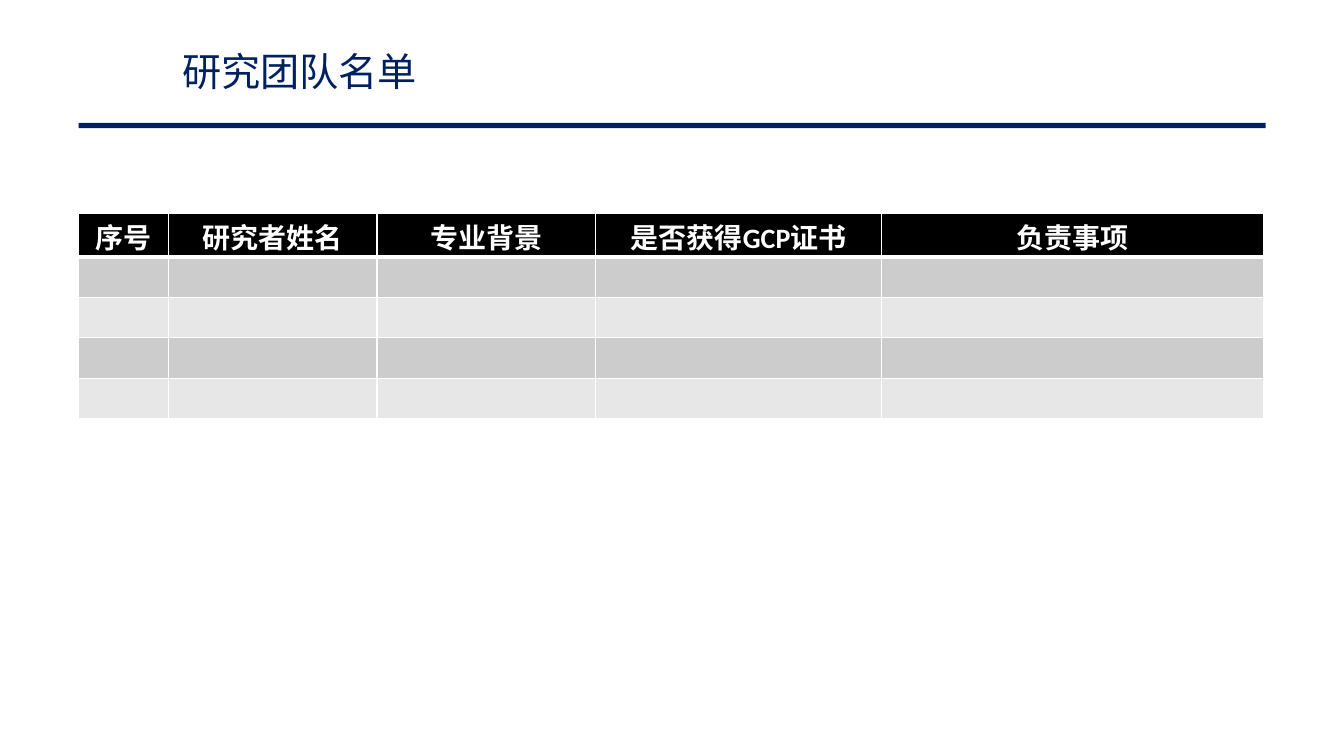
from dataclasses import dataclass

from lxml.etree import SubElement
from pptx import Presentation
from pptx.dml.color import RGBColor
from pptx.enum.shapes import MSO_SHAPE
from pptx.enum.text import MSO_ANCHOR, PP_ALIGN
from pptx.oxml.ns import qn
from pptx.util import Cm, Pt


@dataclass(frozen=True)
class Theme:
    navy: str = "002060"
    white: str = "FFFFFF"
    header: str = "000000"
    bands: tuple = ("CCCCCC", "E7E7E7")
    title_size: int = 28
    header_size: int = 20
    cjk_font: str = "Noto Sans CJK SC"
    latin_font: str = "Calibri"


THEME = Theme()
LEFT, WIDTH = Cm(1.98), Cm(29.92)
HEADERS = ["序号", "研究者姓名", "专业背景", "是否获得GCP证书", "负责事项"]
COLUMN_WIDTHS = [2.26, 5.26, 5.51, 7.21, 9.63]
BODY_ROWS = 4


def add_run(p, text, size, color, font, bold=False):
    r = p.add_run()
    r.text = text
    r.font.size = Pt(size)
    r.font.bold = bold
    r.font.name = font
    r.font.color.rgb = RGBColor.from_string(color)
    SubElement(r._r.get_or_add_rPr(), qn("a:ea"), typeface=THEME.cjk_font)


def add_title(s, text):
    tf = s.shapes.add_textbox(Cm(4.34), Cm(1.52), Cm(8.71), Cm(1.07)).text_frame
    tf.word_wrap = True
    tf.vertical_anchor = MSO_ANCHOR.MIDDLE
    p = tf.paragraphs[0]
    p.line_spacing = Pt(19)
    add_run(p, text, THEME.title_size, THEME.navy, THEME.cjk_font)


def add_rule(s):
    sp = s.shapes.add_shape(MSO_SHAPE.RECTANGLE, LEFT, Cm(3.1), WIDTH, Cm(0.13))
    sp.shadow.inherit = False
    sp.fill.solid()
    sp.fill.fore_color.rgb = RGBColor.from_string(THEME.navy)
    sp.line.fill.background()


def style_cell(cell, fill, top=1, bottom=1):
    # Borders come before the fill in the cell properties
    tc_pr = cell._tc.get_or_add_tcPr()
    for side, width in (("L", 1), ("R", 1), ("T", top), ("B", bottom)):
        ln = SubElement(tc_pr, qn(f"a:ln{side}"), w=str(Pt(width)))
        solid = SubElement(ln, qn("a:solidFill"))
        SubElement(solid, qn("a:srgbClr"), val=THEME.white)
    cell.fill.solid()
    cell.fill.fore_color.rgb = RGBColor.from_string(fill)


def add_team_table(s):
    heights = [Cm(1.09)] + [Cm(1.02)] * BODY_ROWS
    table = s.shapes.add_table(len(heights), len(HEADERS), LEFT, Cm(5.38),
                               WIDTH, sum(heights)).table
    for row, height in zip(table.rows, heights):
        row.height = height
    for column, width in zip(table.columns, COLUMN_WIDTHS):
        column.width = Cm(width)

    # Header row
    for i, text in enumerate(HEADERS):
        cell = table.cell(0, i)
        style_cell(cell, THEME.header, bottom=3)
        cell.margin_top, cell.margin_bottom = Cm(0.07), 0
        p = cell.text_frame.paragraphs[0]
        p.alignment = PP_ALIGN.CENTER
        add_run(p, text, THEME.header_size, THEME.white, THEME.latin_font, bold=True)

    # Empty banded rows
    for n in range(1, BODY_ROWS + 1):
        for cell in table.rows[n].cells:
            style_cell(cell, THEME.bands[(n - 1) % 2], top=3 if n == 1 else 1)
            cell.margin_top = cell.margin_bottom = Cm(0.1)


def main():
    prs = Presentation()
    prs.slide_width, prs.slide_height = Cm(33.87), Cm(19.05)
    s = prs.slides.add_slide(prs.slide_layouts[6])
    add_rule(s)
    add_title(s, "研究团队名单")
    add_team_table(s)
    prs.save("out.pptx")


if __name__ == "__main__":
    main()
